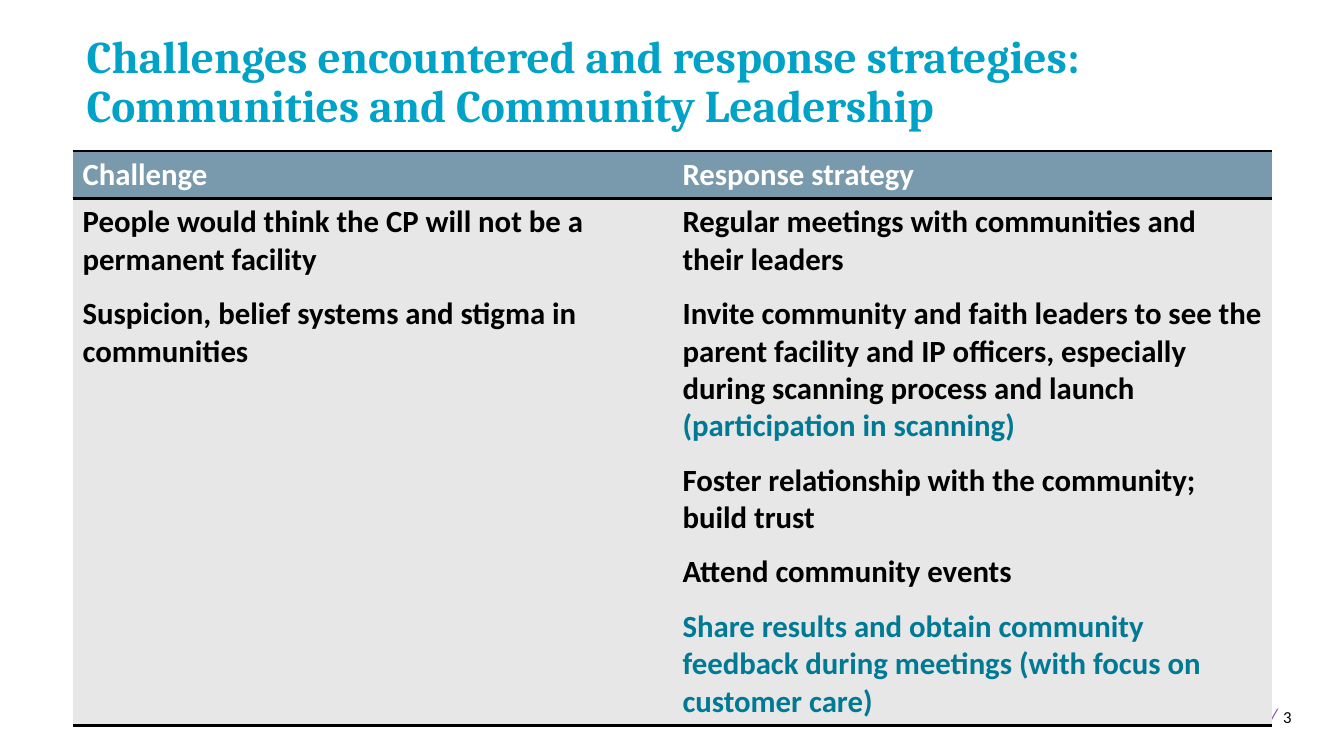
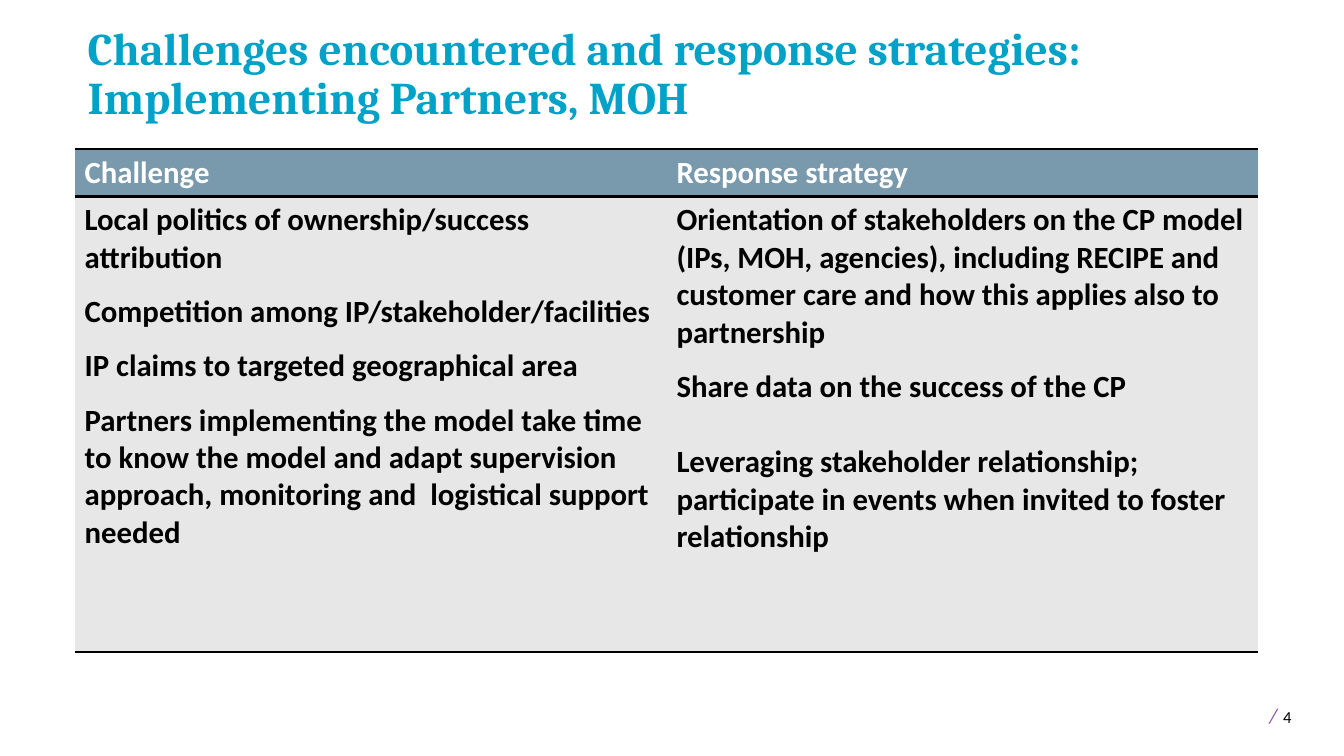
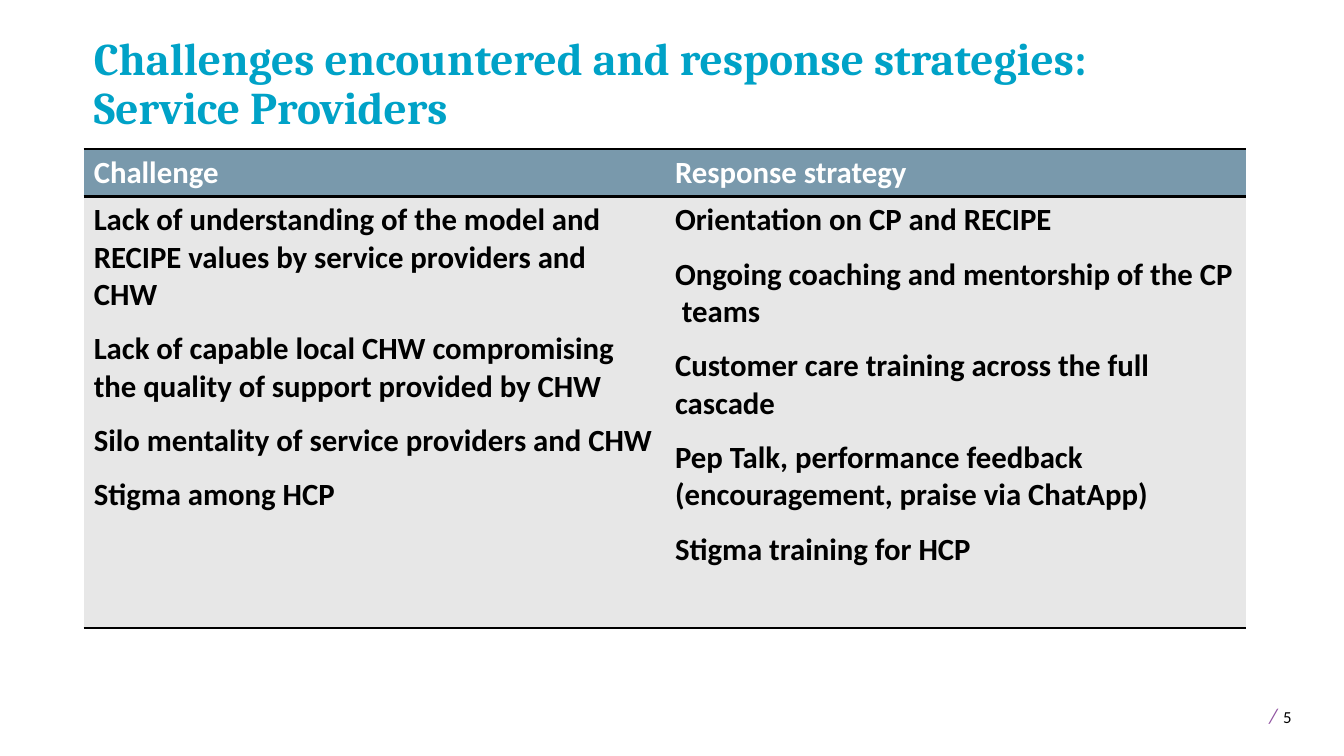
"""Builds three slides on challenges and response strategies."""
from dataclasses import dataclass

from lxml import etree
from pptx import Presentation
from pptx.dml.color import RGBColor
from pptx.enum import text
from pptx.oxml import ns
from pptx.util import Inches, Pt

TITLE_ONLY = 5
PLAIN_TABLE_STYLE = "{2D5ABB26-0587-4C30-8999-92F81FD0307C}"


def colour(hex_value):
    """Return the colour for a hex string."""
    return RGBColor.from_string(hex_value)


@dataclass
class Point:
    """One paragraph of a table cell, with an optional accented ending."""
    plain: str = ""
    accent: str = ""
    gap: float = 12


class Deck:
    """Holds the shared style and the current slide."""
    TITLE, SLASH, HEADER, BODY = "00A2C7", "9053A1", "7999AC", "E7E7E7"
    INK, PAPER, ACCENT = "000000", "FFFFFF", "007995"
    HEADING_FONT, BODY_FONT = "Cambria", "Calibri"
    HEADER_HEIGHT = 0.47

    def __init__(self):
        """Start an empty widescreen presentation."""
        self.prs = Presentation()
        self.prs.slide_width, self.prs.slide_height = Inches(13.33), Inches(7.5)
        self.slide = None

    def new_slide(self, number):
        """Add a slide with its page number."""
        self.slide = self.prs.slides.add_slide(self.prs.slide_layouts[TITLE_ONLY])
        footer = self.slide.shapes.add_textbox(
            Inches(12.43), Inches(6.88), Inches(0.87), Inches(0.4)).text_frame
        footer.word_wrap = True
        footer.margin_left = Inches(0.16)
        line = footer.paragraphs[0]
        line.font.name = self.BODY_FONT
        for words, size, ink in (("/", 15, self.SLASH), (" ", 18, self.INK),
                                 (str(number), 12, self.INK)):
            run = line.add_run()
            run.text = words
            run.font.size = Pt(size)
            run.font.italic = words == "/"
            run.font.color.rgb = colour(ink)

    def title(self, audience, left, top, width):
        """Fill the title placeholder."""
        heading = self.slide.shapes.title
        heading.left, heading.top = Inches(left), Inches(top)
        heading.width, heading.height = Inches(width), Inches(1.13)
        frame = heading.text_frame
        frame.text = f"Challenges encountered and response strategies:\v{audience}"
        frame.word_wrap = True
        frame.auto_size = text.MSO_AUTO_SIZE.NONE
        frame.vertical_anchor = text.MSO_ANCHOR.BOTTOM
        line = frame.paragraphs[0]
        line.alignment = text.PP_ALIGN.LEFT
        line.line_spacing = 0.9
        self.style(line.font, self.TITLE, 32.4, self.HEADING_FONT)

    def style(self, font, ink, size=22, name=BODY_FONT):
        """Set a bold font in one colour."""
        font.name, font.size, font.bold = name, Pt(size), True
        font.color.rgb = colour(ink)

    def table(self, challenges, strategies, left, top, width, body_height):
        """Add the two-column table of challenges and strategies."""
        grid = self.slide.shapes.add_table(
            2, 2, Inches(left), Inches(top), Inches(width),
            Inches(self.HEADER_HEIGHT + body_height)).table
        grid._tbl.tblPr.find(ns.qn("a:tableStyleId")).text = PLAIN_TABLE_STYLE
        grid.rows[0].height = Inches(self.HEADER_HEIGHT)
        grid.rows[1].height = Inches(body_height)
        columns = (("Challenge", challenges), ("Response strategy", strategies))
        for index, (heading, points) in enumerate(columns):
            self.cell(grid.cell(0, index), [Point(heading)],
                      self.HEADER, self.PAPER, ("a:lnT", "a:lnB"))
            self.cell(grid.cell(1, index), points,
                      self.BODY, self.INK, ("a:lnT", "a:lnB"))

    def cell(self, cell, points, fill, ink, edges):
        """Fill one cell with points, borders and background."""
        for edge in edges:
            self.border(cell, edge)
        cell.fill.solid()
        cell.fill.fore_color.rgb = colour(fill)
        frame = cell.text_frame
        for index, point in enumerate(points):
            line = frame.add_paragraph() if index else frame.paragraphs[0]
            if index:
                line.space_before = Pt(point.gap)
            for words, run_ink in ((point.plain, ink), (point.accent, self.ACCENT)):
                if words:
                    run = line.add_run()
                    run.text = words
                    run.font.color.rgb = colour(run_ink)
            self.style(line.font, ink if point.plain else self.ACCENT)

    def border(self, cell, edge):
        """Draw one edge of a cell."""
        edge_line = etree.SubElement(
            cell._tc.get_or_add_tcPr(), ns.qn(edge), w=str(Pt(2)))
        paint = etree.SubElement(edge_line, ns.qn("a:solidFill"))
        etree.SubElement(paint, ns.qn("a:srgbClr"), val=self.INK)


def main():
    """Build and save the slides."""
    deck = Deck()

    deck.new_slide(3)
    deck.title("Communities and Community Leadership", 0.76, 0.23, 11.85)
    deck.table(
        [Point("People would think the CP will not be a permanent facility"),
         Point("Suspicion, belief systems and stigma in communities")],
        [Point("Regular meetings with communities and their leaders"),
         Point("Invite community and faith leaders to see the parent facility and "
               "IP officers, especially during scanning process and launch ",
               "(participation in scanning)"),
         Point("Foster relationship with the community; build trust"),
         Point("Attend community events"),
         Point(accent="Share results and obtain community feedback during meetings "
                      "(with focus on customer care)")],
        0.72, 1.5, 11.9, 5.23)

    deck.new_slide(4)
    deck.title("Implementing Partners, MOH", 0.77, 0.15, 11.58)
    deck.table(
        [Point("Local politics of ownership/success attribution"),
         Point("Competition among IP/stakeholder/facilities"),
         Point("IP claims to targeted geographical area"),
         Point("Partners implementing the model take time to know the model and adapt "
               "supervision approach, monitoring and  logistical support needed")],
        [Point("Orientation of stakeholders on the CP model (IPs, MOH, agencies), "
               "including RECIPE and customer care and how this applies also to "
               "partnership"),
         Point("Share data on the success of the CP"),
         Point("Leveraging stakeholder relationship; participate in events when "
               "invited to foster relationship", gap=27)],
        0.74, 1.48, 11.74, 4.52)

    deck.new_slide(5)
    deck.title("Service Providers", 0.83, 0.25, 11.81)
    deck.table(
        [Point("Lack of understanding of the model and RECIPE values by service "
               "providers and CHW"),
         Point("Lack of capable local CHW compromising the quality of support "
               "provided by CHW"),
         Point("Silo mentality of service providers and CHW"),
         Point("Stigma among HCP")],
        [Point("Orientation on CP and RECIPE"),
         Point("Ongoing coaching and mentorship of the CP  teams"),
         Point("Customer care training across the full cascade"),
         Point("Pep Talk, performance feedback (encouragement, praise via ChatApp)"),
         Point("Stigma training for HCP")],
        0.83, 1.48, 11.53, 4.28)

    deck.prs.save("out.pptx")


if __name__ == "__main__":
    main()
